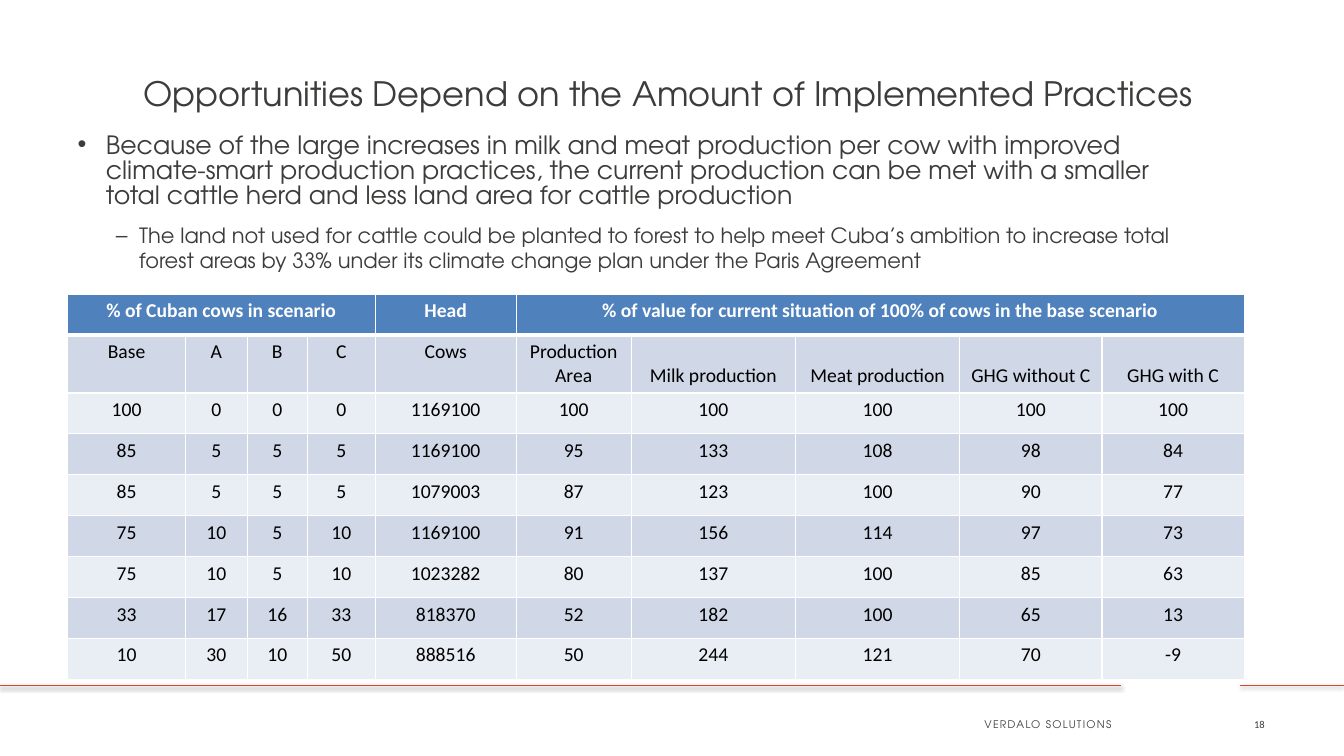
"""Build the slide on cattle herd scenarios and their production and emissions."""
from dataclasses import dataclass

from lxml import etree
from pptx import Presentation
from pptx import util as u
from pptx.dml.color import RGBColor
from pptx.enum import shapes, text
from pptx.oxml import parse_xml
from pptx.oxml.ns import nsdecls, qn


@dataclass(frozen=True)
class Theme:
    ink: str = "3C3C3B"
    rule: str = "DA4627"
    header: str = "4F81BD"
    bands: tuple = ("D0D8E8", "E9EDF4")
    white: str = "FFFFFF"
    black: str = "000000"
    display: str = "TeX Gyre Adventor"
    plain: str = "Calibri"
    title: float = 24
    bullet: float = 18
    dash: float = 15
    cell: float = 14
    footer: float = 7.5


THEME = Theme()
WIDTH, HEIGHT = u.Inches(13.33), u.Inches(7.5)
COLUMN_SHARES = (8.78, 4.58, 4.5, 5.03, 10.5, 8.55, 12.23, 12.23, 10.58, 10.58)
ROW_SHARE = 5.41
GROUPS = (
    (0, 3, "% of Cuban cows in scenario"),
    (4, 4, "Head"),
    (5, 9, "% of value for current situation of 100% of cows in the base scenario"),
)
HEADINGS = ("Base", "A", "B", "C", "Cows", "Production Area", "Milk production",
            "Meat production", "GHG without C", "GHG with C")
FIRST_LOW_HEADING = 6
SCENARIOS = (
    (100, 0, 0, 0, 1169100, 100, 100, 100, 100, 100),
    (85, 5, 5, 5, 1169100, 95, 133, 108, 98, 84),
    (85, 5, 5, 5, 1079003, 87, 123, 100, 90, 77),
    (75, 10, 5, 10, 1169100, 91, 156, 114, 97, 73),
    (75, 10, 5, 10, 1023282, 80, 137, 100, 85, 63),
    (33, 17, 16, 33, 818370, 52, 182, 100, 65, 13),
    (10, 30, 10, 50, 888516, 50, 244, 121, 70, -9),
)


def across(share):
    return u.Emu(round(WIDTH * share / 100))


def down(share):
    return u.Emu(round(HEIGHT * share / 100))


def area(left, top, width, height):
    return across(left), down(top), across(width), down(height)


def place(shape, bounds):
    shape.left, shape.top, shape.width, shape.height = bounds


def add_span(para, words, size, color=THEME.ink, font=THEME.display, bold=False):
    span = para.add_run()
    span.text = words
    span.font.size = u.Pt(size)
    span.font.name = font
    span.font.bold = bold
    span.font.color.rgb = RGBColor.from_string(color)
    return span


def add_title(page, words):
    box = page.shapes.title
    place(box, area(5.03, 4, 90.02, 16.67))
    frame = box.text_frame
    frame.auto_size = text.MSO_AUTO_SIZE.NONE
    frame.vertical_anchor = text.MSO_ANCHOR.MIDDLE
    para = frame.paragraphs[0]
    para.alignment = text.PP_ALIGN.CENTER
    add_span(para, words, THEME.title)


def add_list(page, items):
    box = page.placeholders[1]
    place(box, area(5.03, 17.07, 84.7, 63.2))
    frame = box.text_frame
    frame.auto_size = text.MSO_AUTO_SIZE.NONE
    styles = (("•", 0.28, 0.28, THEME.bullet), ("–", 0.61, 0.23, THEME.dash))
    for index, (level, words) in enumerate(items):
        para = frame.add_paragraph() if index else frame.paragraphs[0]
        mark, margin, hang, size = styles[level]
        para.level = level
        para.line_spacing = u.Pt(18)
        para.space_before = u.Pt(4.5 if index else 0)
        para.space_after = u.Pt(4.5)
        props = para._p.get_or_add_pPr()
        props.set("marL", str(u.Inches(margin)))
        props.set("indent", str(-u.Inches(hang)))
        etree.SubElement(props, qn("a:buChar")).set("char", mark)
        add_span(para, words, size)


def add_borders(cell, top, bottom):
    props = cell._tc.get_or_add_tcPr()
    for side, points in (("L", 1), ("R", 1), ("T", top), ("B", bottom)):
        props.append(parse_xml(
            f'<a:ln{side} {nsdecls("a")} w="{u.Pt(points)}"><a:solidFill>'
            f'<a:srgbClr val="{THEME.white}"/></a:solidFill></a:ln{side}>'))


def style_cell(cell, row):
    add_borders(cell, 3 if row == 1 else 1, 1 if row else 3)
    cell.fill.solid()
    color = THEME.bands[(row - 1) % 2] if row else THEME.header
    cell.fill.fore_color.rgb = RGBColor.from_string(color)


def write_cell(cell, value, color=THEME.black, bold=False):
    para = cell.text_frame.paragraphs[0]
    para.alignment = text.PP_ALIGN.CENTER
    add_span(para, str(value), THEME.cell, color, THEME.plain, bold)


def add_scenarios(page):
    lines = (HEADINGS, *SCENARIOS)
    count = len(lines) + 1
    bounds = area(5.03, 38.93, sum(COLUMN_SHARES), ROW_SHARE * count)
    table = page.shapes.add_table(count, len(COLUMN_SHARES), *bounds).table
    table.horz_banding = False
    for column, share in zip(table.columns, COLUMN_SHARES):
        column.width = across(share)
    for index, row in enumerate(table.rows):
        row.height = down(ROW_SHARE)
        for cell in row.cells:
            style_cell(cell, index)
    for first, last, words in GROUPS:
        cell = table.cell(0, first)
        if last > first:
            cell.merge(table.cell(0, last))
        write_cell(cell, words, THEME.white, True)
    for row, values in enumerate(lines, 1):
        for column, value in enumerate(values):
            write_cell(table.cell(row, column), value)
    for column in range(FIRST_LOW_HEADING, len(HEADINGS)):
        table.cell(1, column).vertical_anchor = text.MSO_ANCHOR.BOTTOM


def add_rule(page, start, end):
    level = down(90.67)
    rule = page.shapes.add_connector(
        shapes.MSO_CONNECTOR.STRAIGHT, across(start), level, across(end), level)
    rule.line.color.rgb = RGBColor.from_string(THEME.rule)
    rule.line.width = u.Pt(0.75)
    rule._element.spPr.append(parse_xml(
        f'<a:effectLst {nsdecls("a")}><a:outerShdw blurRad="{u.Pt(3.1)}" '
        f'dist="{u.Pt(1.6)}" dir="5400000" rotWithShape="0">'
        f'<a:srgbClr val="{THEME.black}"><a:alpha val="38000"/></a:srgbClr>'
        '</a:outerShdw></a:effectLst>'))


def add_footer(page, left, width, words, font, align):
    frame = page.shapes.add_textbox(*area(left, 93.2, width, 5.33)).text_frame
    frame.word_wrap = True
    frame.vertical_anchor = text.MSO_ANCHOR.MIDDLE
    para = frame.paragraphs[0]
    para.alignment = align
    return add_span(para, words, THEME.footer, font=font)


def main():
    deck = Presentation()
    deck.slide_width, deck.slide_height = WIDTH, HEIGHT
    page = deck.slides.add_slide(deck.slide_layouts[1])
    add_rule(page, 100, 92.27)
    add_rule(page, 83.42, 0)
    add_title(page, "Opportunities Depend on the Amount of Implemented Practices ")
    add_list(page, (
        (0, "Because of the large increases in milk and meat production per cow with "
            "improved climate-smart production practices, the current production can be "
            "met with a smaller total cattle herd and less land area for cattle production"),
        (1, "The land not used for cattle could be planted to forest to help meet Cuba’s "
            "ambition to increase total forest areas by 33% under its climate change plan "
            "under the Paris Agreement"),
    ))
    add_scenarios(page)
    owner = add_footer(page, 51.76, 31.66, "VERDALO SOLUTIONS", THEME.display,
                       text.PP_ALIGN.RIGHT)
    owner._r.get_or_add_rPr().set("spc", "90")
    add_footer(page, 92.57, 6.15, "18", THEME.plain, text.PP_ALIGN.LEFT)
    deck.save("out.pptx")


if __name__ == "__main__":
    main()
